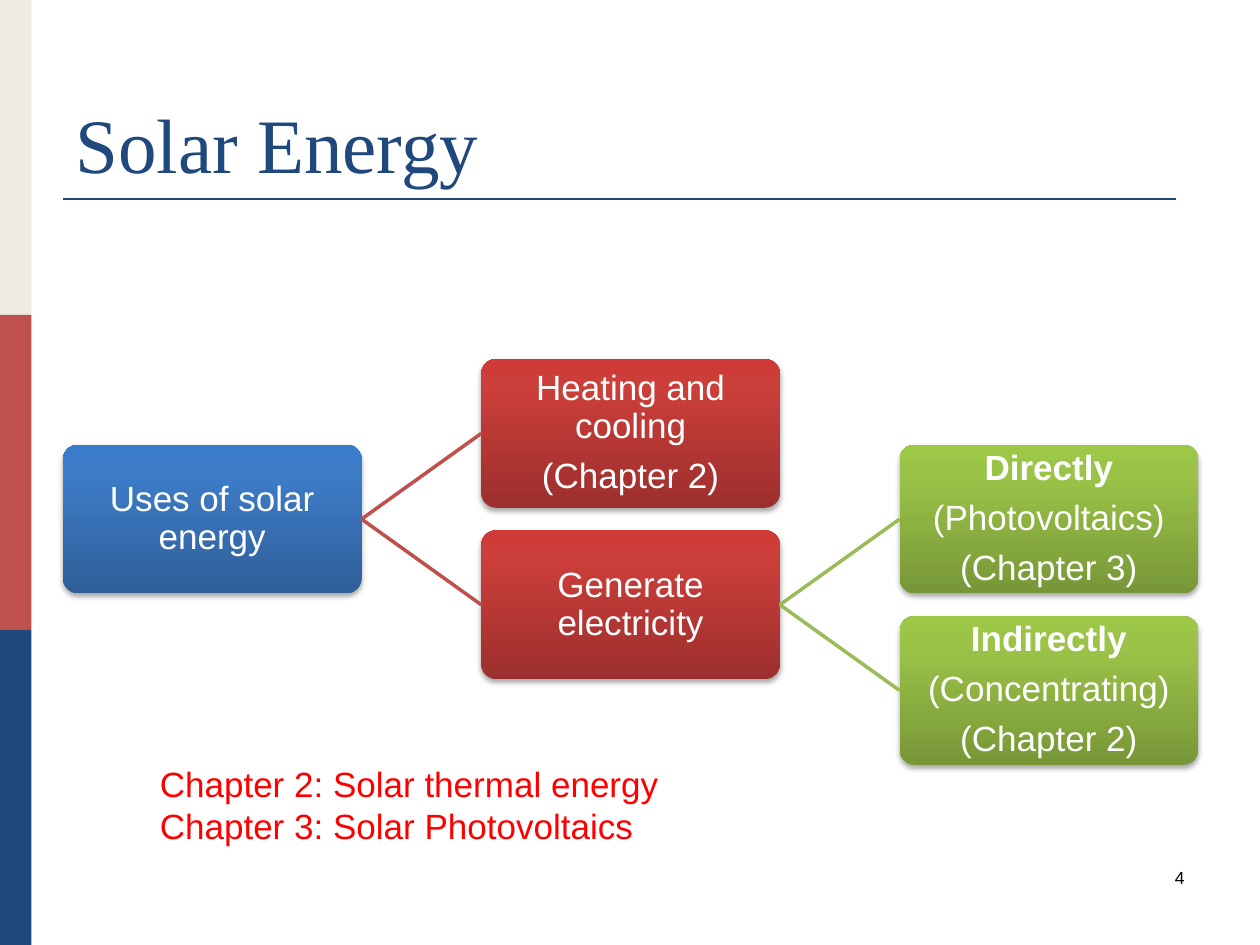
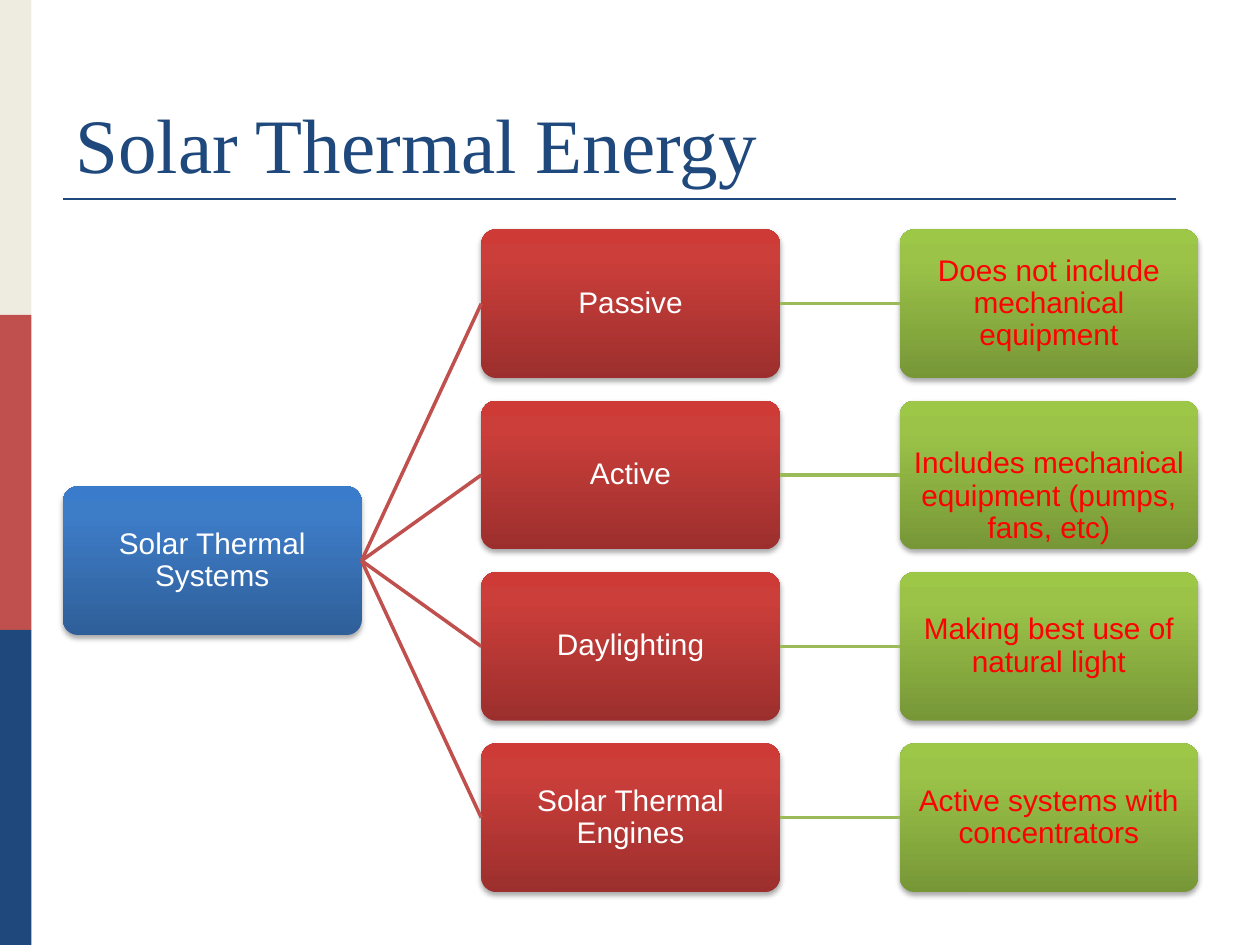
from copy import deepcopy
from dataclasses import dataclass
from typing import Optional

from lxml.etree import SubElement
from pptx import Presentation
from pptx.dml.color import RGBColor
from pptx.enum.shapes import MSO_CONNECTOR, MSO_SHAPE
from pptx.enum.text import MSO_ANCHOR, MSO_AUTO_SIZE, PP_ALIGN
from pptx.oxml.ns import qn
from pptx.util import Inches, Pt


@dataclass(frozen=True)
class Theme:
    title_font: str = "Times New Roman"
    body_font: str = "Arial"
    title_size: int = 44
    note_size: int = 20
    number_size: int = 10
    navy: str = "1F497D"
    red: str = "C0504D"
    cream: str = "EEECE1"
    green: str = "9BBB59"
    white: str = "FFFFFF"
    black: str = "000000"
    alert: str = "FF0000"


@dataclass(frozen=True)
class Level:
    """Look of one column of the tree; link colours the lines that lead into it."""
    stops: tuple[str, str, str]
    link: Optional[str] = None


@dataclass(frozen=True)
class Node:
    """Box of the tree; a node with children is centred on them, a leaf has a row."""
    lines: tuple[str, ...]
    row: float = 0
    children: tuple["Node", ...] = ()
    bold_lead: bool = False
    color: str = Theme.white
    top_inset: float = 0.01

    def position(self) -> float:
        if not self.children:
            return self.row
        return sum(c.position() for c in self.children) / len(self.children)


THEME = Theme()
LEVELS = (
    Level(("2F5F99", "3D7CC7", "3A7CCB")),
    Level(("9C2F2D", "CB3E3A", "CE3B37"), THEME.red),
    Level(("779737", "9BC348", "9DC746"), THEME.green),
)
STOP_POSITIONS = (0, 0.8, 1)
BOX_W, BOX_H = 2.37, 1.18
TREE_LEFT, COLUMN_PITCH, ROW_PITCH = 0.5, 3.32, 1.36
BAND_W, BAND_H = 0.25, 2.5

USES = Node(("Uses of solar energy",), children=(
    Node(("Heating and cooling", "(Chapter 2)"), row=0),
    Node(("Generate electricity",), children=(
        Node(("Directly", "(Photovoltaics)", "(Chapter 3)"), row=0.5, bold_lead=True),
        Node(("Indirectly", "(Concentrating)", "(Chapter 2)"), row=1.5, bold_lead=True),
    )),
))

# System, what it means, top inset of the meaning
SYSTEMS = (
    ("Passive", "Does not include mechanical equipment", 0.01),
    ("Active", "Includes mechanical equipment (pumps, fans, etc)", 0.35),
    ("Daylighting", "Making best use of natural light", 0.01),
    ("Solar Thermal Engines", "Active systems with concentrators", 0.01),
)
THERMAL = Node(("Solar Thermal Systems",), children=tuple(
    Node((system,), children=(
        Node((meaning,), row=row, color=THEME.alert, top_inset=inset),
    ))
    for row, (system, meaning, inset) in enumerate(SYSTEMS)
))


def rgb(color: str) -> RGBColor:
    return RGBColor.from_string(color)


def style(p, size: int, color: str, font: str = THEME.body_font) -> None:
    p.font.name = font
    p.font.size = Pt(size)
    p.font.color.rgb = rgb(color)


def style_line(connector, color: str, width: float) -> None:
    connector.line.color.rgb = rgb(color)
    connector.line.width = Pt(width)
    SubElement(connector.element.spPr, qn("a:effectLst"))


def fill_gradient(shape, colors: tuple[str, str, str]) -> None:
    """Run three colours from the bottom of the shape to its top."""
    shape.fill.gradient()
    shape.fill.gradient_angle = 90
    stops = shape.element.spPr.find(".//" + qn("a:gsLst"))
    stops.append(deepcopy(stops[-1]))
    for stop, position, color in zip(shape.fill.gradient_stops, STOP_POSITIONS, colors):
        stop.position = position
        stop.color.rgb = rgb(color)


def add_soft_shadow(shape) -> None:
    shape.shadow.inherit = False
    effects = shape.element.spPr.find(qn("a:effectLst"))
    shadow = SubElement(effects, qn("a:outerShdw"), blurRad=str(Pt(3.1)),
                        dist=str(Pt(1.8)), dir="5400000", rotWithShape="0")
    color = SubElement(shadow, qn("a:srgbClr"), val=THEME.black)
    SubElement(color, qn("a:alpha"), val="35000")


def add_box(s, node: Node, level: int, first_top: float, size: int):
    box = s.shapes.add_shape(
        MSO_SHAPE.ROUNDED_RECTANGLE,
        Inches(TREE_LEFT + level * COLUMN_PITCH),
        Inches(first_top + node.position() * ROW_PITCH),
        Inches(BOX_W), Inches(BOX_H))
    box.adjustments[0] = 0.1
    fill_gradient(box, LEVELS[level].stops)
    box.line.fill.background()
    add_soft_shadow(box)
    tf = box.text_frame
    tf.word_wrap = True
    tf.vertical_anchor = MSO_ANCHOR.MIDDLE
    tf.margin_left = tf.margin_right = tf.margin_bottom = Inches(0.01)
    tf.margin_top = Inches(node.top_inset)
    tf.text = "\n".join(node.lines)
    for p in tf.paragraphs:
        style(p, size, node.color)
        p.alignment = PP_ALIGN.CENTER
        p.line_spacing = 0.9
        p.space_after = Pt(round(0.35 * size))
    tf.paragraphs[0].font.bold = node.bold_lead
    return box


def add_tree(s, node: Node, first_top: float, size: int, level: int = 0):
    """Draw a node with everything below it and return its box."""
    box = add_box(s, node, level, first_top, size)
    for child in node.children:
        child_box = add_tree(s, child, first_top, size, level + 1)
        link = s.shapes.add_connector(MSO_CONNECTOR.STRAIGHT, 0, 0, 0, 0)
        link.begin_connect(box, 3)
        link.end_connect(child_box, 1)
        style_line(link, LEVELS[level + 1].link, 2)
    return box


def add_text(s, text: str, left: float, top: float, width: float, height: float,
             size: int, color: str, align: PP_ALIGN = PP_ALIGN.LEFT) -> None:
    tf = s.shapes.add_textbox(Inches(left), Inches(top),
                              Inches(width), Inches(height)).text_frame
    tf.word_wrap = True
    tf.text = text
    for p in tf.paragraphs:
        style(p, size, color)
        p.alignment = align


def add_base_slide(prs, title: str):
    """Add a slide with the side bands, the title and the rule below it."""
    s = prs.slides.add_slide(prs.slide_layouts[5])
    for i, color in enumerate((THEME.cream, THEME.red, THEME.navy)):
        band = s.shapes.add_shape(MSO_SHAPE.RECTANGLE, 0, Inches(i * BAND_H),
                                  Inches(BAND_W), Inches(BAND_H))
        band.fill.solid()
        band.fill.fore_color.rgb = rgb(color)
        band.line.fill.background()
        band.shadow.inherit = False
    rule = s.shapes.add_connector(MSO_CONNECTOR.STRAIGHT, Inches(0.5), Inches(1.58),
                                  Inches(9.33), Inches(1.58))
    style_line(rule, THEME.navy, 1.5)

    sp = s.shapes.title
    sp.left, sp.top, sp.width, sp.height = map(Inches, (0.5, 0.3, 9, 1.25))
    tf = sp.text_frame
    tf.text = title
    tf.auto_size = MSO_AUTO_SIZE.NONE
    tf.vertical_anchor = MSO_ANCHOR.BOTTOM
    p = tf.paragraphs[0]
    p.alignment = PP_ALIGN.LEFT
    style(p, THEME.title_size, THEME.navy, THEME.title_font)
    return s


def main() -> None:
    prs = Presentation()
    prs.slide_width, prs.slide_height = Inches(10), Inches(7.5)

    s = add_base_slide(prs, "Solar Energy")
    add_tree(s, USES, first_top=2.85, size=20)
    add_text(s, "4", 7.17, 6.83, 2.33, 0.5, THEME.number_size, THEME.black, PP_ALIGN.RIGHT)
    add_text(s, "Chapter 2: Solar thermal energy\nChapter 3: Solar Photovoltaics",
             1.17, 6, 4.58, 0.77, THEME.note_size, THEME.alert)

    s = add_base_slide(prs, "Solar Thermal Energy")
    add_tree(s, THERMAL, first_top=1.82, size=17)

    prs.save("out.pptx")


if __name__ == "__main__":
    main()
